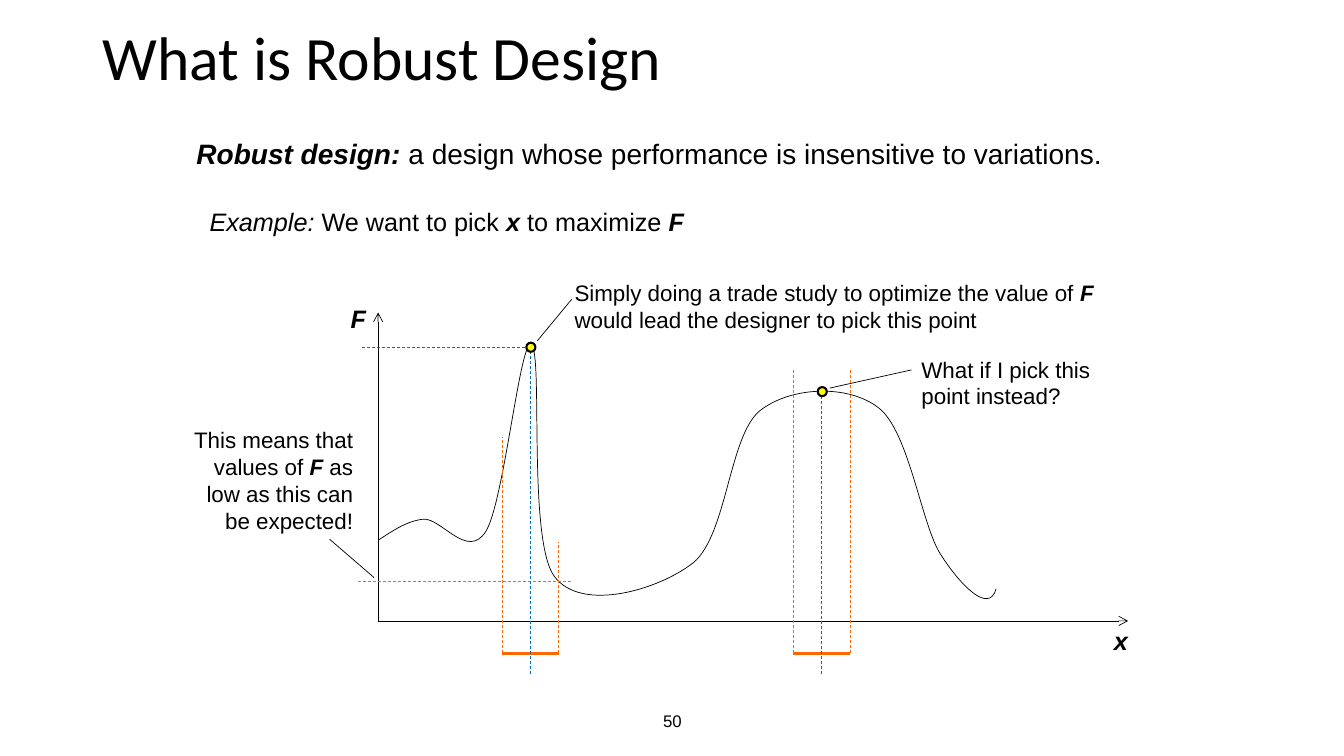
from lxml import etree
from pptx import Presentation
from pptx.dml.color import RGBColor
from pptx.enum.dml import MSO_LINE
from pptx.enum.shapes import MSO_CONNECTOR, MSO_SHAPE
from pptx.enum.text import MSO_ANCHOR, MSO_AUTO_SIZE, PP_ALIGN
from pptx.oxml.ns import qn
from pptx.util import Pt

PX = 9144
BLACK = RGBColor(0x00, 0x00, 0x00)
ORANGE = RGBColor(0xFF, 0x66, 0x00)
BLUE = RGBColor(0x00, 0x70, 0xC0)
YELLOW = RGBColor(0xFF, 0xFF, 0x00)
LEFT, CENTER, RIGHT = PP_ALIGN.LEFT, PP_ALIGN.CENTER, PP_ALIGN.RIGHT
TOP, MIDDLE = MSO_ANCHOR.TOP, MSO_ANCHOR.MIDDLE
GROW = MSO_AUTO_SIZE.SHAPE_TO_FIT_TEXT
FIXED = MSO_AUTO_SIZE.NONE
STRAIGHT = MSO_CONNECTOR.STRAIGHT
OVAL = MSO_SHAPE.OVAL
DASH = MSO_LINE.DASH

CURVE_START = (375, 536)
CURVE = [
    ((389, 527), (403, 517), (420, 515)),
    ((438, 514), (464, 556), (482, 527)),
    ((500, 498), (516, 335), (527, 342)),
    ((539, 350), (523, 536), (550, 572)),
    ((577, 608), (654, 585), (688, 558)),
    ((721, 530), (723, 434), (753, 408)),
    ((784, 383), (842, 381), (872, 405)),
    ((902, 429), (914, 521), (933, 550)),
    ((952, 580), (981, 610), (988, 584)),
]


class Canvas:
    font = "Arial"
    thin = 0.5

    def __init__(self, slide):
        self.shapes = slide.shapes

    def text(self, x, y, w, h, runs, size, align=LEFT, anchor=TOP, wrap=True,
             fit=GROW, font=font, spacing=None):
        box = self.shapes.add_textbox(x * PX, y * PX, w * PX, h * PX)
        tf = box.text_frame
        tf.word_wrap = wrap
        tf.auto_size = fit
        tf.vertical_anchor = anchor
        p = tf.paragraphs[0]
        p.alignment = align
        p.line_spacing = spacing
        for words, style in runs:
            r = p.add_run()
            r.text = words
            r.font.name = font
            r.font.size = Pt(size)
            r.font.color.rgb = BLACK
            r.font.bold = "b" in style
            r.font.italic = "i" in style

    def line(self, x1, y1, x2, y2, color=BLACK, width=thin, dash=None, arrow=False):
        c = self.shapes.add_connector(STRAIGHT, x1 * PX, y1 * PX, x2 * PX, y2 * PX)
        c.line.color.rgb = color
        c.line.width = Pt(width)
        if dash:
            c.line.dash_style = dash
        if arrow:
            etree.SubElement(c.line._get_or_add_ln(), qn("a:tailEnd"), type="arrow")
        etree.SubElement(c._element.spPr, qn("a:effectLst"))

    def guide(self, x1, y1, x2, y2, color):
        self.line(x1, y1, x2, y2, color, dash=DASH)

    def dot(self, cx, cy):
        sp = self.shapes.add_shape(OVAL, (cx - 4) * PX, (cy - 4) * PX, 9 * PX, 9 * PX)
        sp.shadow.inherit = False
        sp.fill.solid()
        sp.fill.fore_color.rgb = YELLOW
        sp.line.color.rgb = BLACK
        sp.line.width = Pt(1.5)

    def curve(self, start, segments):
        anchors = [segment[-1] for segment in segments]
        builder = self.shapes.build_freeform(*start, scale=PX)
        builder.add_line_segments(anchors, close=False)
        sp = builder.convert_to_shape()
        sp.shadow.inherit = False
        sp.fill.background()
        sp.line.color.rgb = BLACK
        sp.line.width = Pt(self.thin)
        left = min(x for x, y in [start] + anchors)
        top = min(y for x, y in [start] + anchors)
        edges = list(sp._element.iter(qn("a:lnTo")))
        for edge, (first, second, end) in zip(edges, segments):
            bezier = etree.Element(qn("a:cubicBezTo"))
            for x, y in (first, second, end):
                etree.SubElement(bezier, qn("a:pt"), x=str(x - left), y=str(y - top))
            edge.getparent().replace(edge, bezier)


def main():
    prs = Presentation()
    prs.slide_width, prs.slide_height = 1333 * PX, 750 * PX
    s = Canvas(prs.slides.add_slide(prs.slide_layouts[6]))

    s.text(442, 695, 450, 40, [("50", "")], 12, CENTER, MIDDLE, fit=FIXED)
    s.text(92, -12, 1150, 145, [("What is Robust Design", "")], 44,
           anchor=MIDDLE, fit=FIXED, font="Calibri", spacing=0.9)
    s.text(185, 131, 956, 43, [
        ("Robust design: ", "bi"),
        ("a design whose performance is insensitive to variations.", "")], 20)
    s.text(198, 200, 491, 40, [
        ("Example: ", "i"), ("We want to pick ", ""), ("x", "bi"),
        (" to maximize ", ""), ("F", "bi")], 18, wrap=False)

    s.curve(CURVE_START, CURVE)
    s.line(375, 616, 1119, 616, arrow=True)
    s.line(375, 616, 375, 310, arrow=True)
    s.text(338, 296, 35, 40, [("F", "bi")], 18, wrap=False)
    s.text(1095, 615, 34, 40, [("x", "bi")], 18, wrap=False)

    peaks = [(526, 344, 434, 538), (815, 388, 366, 366)]
    s.guide(526, 345, 358, 345, BLUE)
    s.guide(566, 577, 353, 577, ORANGE)
    for x, y, left_top, right_top in peaks:
        s.line(x - 28, 648, x + 28, 648, ORANGE, 2.25)
        s.guide(x - 28, 648, x - 28, left_top, ORANGE)
        s.guide(x + 28, 648, x + 28, right_top, ORANGE)
        s.guide(x, 669, x, y, BLUE)
        s.dot(x, y)

    s.text(560, 272, 581, 64, [
        ("Simply doing a trade study to optimize the value of ", ""), ("F", "bi"),
        (" would lead the designer to pick this point", "")], 16)
    s.line(567, 297, 533, 338)
    s.text(179, 418, 181, 117, [
        ("This means that values of ", ""), ("F", "bi"),
        (" as low as this can be expected!", "")], 16, RIGHT)
    s.line(371, 573, 327, 535)
    s.text(904, 348, 212, 64, [("What if I pick this point instead?", "")], 16)
    s.line(823, 385, 904, 367)

    prs.save("out.pptx")


if __name__ == "__main__":
    main()
